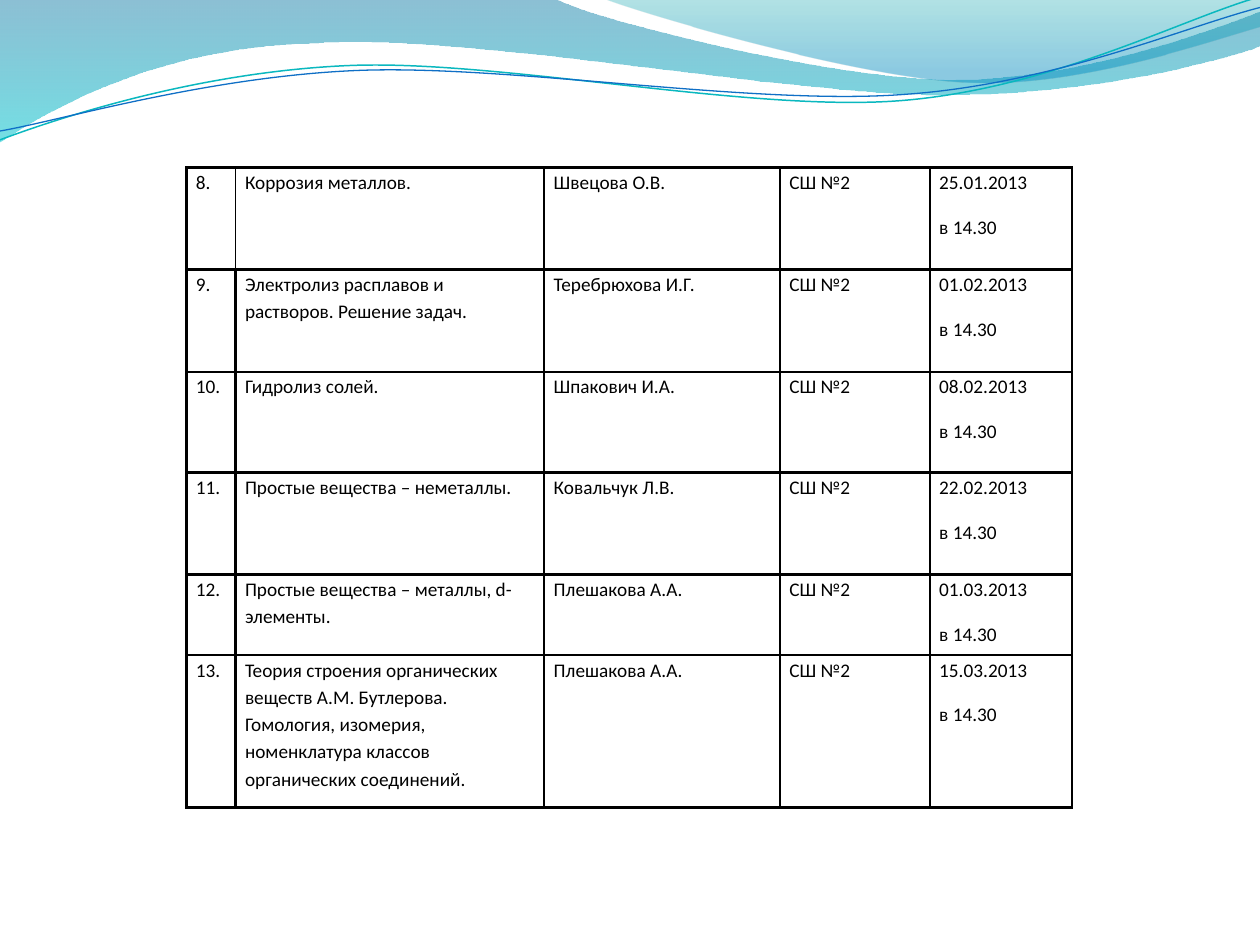
from dataclasses import dataclass
from math import cos, radians, sin

from lxml.etree import SubElement
from pptx import Presentation
from pptx.dml.color import RGBColor
from pptx.oxml.ns import qn
from pptx.util import Inches, Pt

COLORS = {
    "ink": "000000", "deep": "0074A1", "cyan": "00C6CF",
    "teal": "00A1A9", "sky": "008BBF", "aqua": "0AB8BF", "blue": "0F6FC6",
}
TILT = 357.3
Point = tuple[float, float]


@dataclass
class Stop:
    place: float
    color: str
    alpha: int


@dataclass
class Wave:
    """Outline whose steps hold one point (line) or three points (curve)."""
    start: Point
    steps: list[tuple[Point, ...]]
    stops: tuple[Stop, ...] = ()
    line: str = ""
    width: float = 0
    center: Point = (0, 0)
    turn: float = 0


@dataclass
class Lesson:
    num: int
    topic: str
    tutor: str
    date: str
    height: float


WAVES = [
    Wave((0, 0), [
        ((4.4, -0.01),),
        ((4.76, 0.17), (6.64, 0.63), (7.58, 0.63)),
        ((8.53, 0.63), (9.58, 0.26), (10, 0.09)),
        ((10.01, 0.36),),
        ((9.83, 0.44), (8.7, 0.76), (7.46, 0.75)),
        ((6.22, 0.75), (3.82, 0.28), (2.57, 0.34)),
        ((1.29, 0.36), (0.46, 0.83), (-0.01, 1.13)),
        ((0, 0),),
    ], stops=(Stop(0, "deep", 45), Stop(1, "cyan", 55))),
    Wave((4.79, -0.01), [
        ((5.09, 0.11), (6.82, 0.62), (7.69, 0.65)),
        ((8.56, 0.69), (9.61, 0.32), (10, 0.21)),
        ((10, 0),),
        ((4.79, -0.01),),
    ], stops=(Stop(0, "teal", 30), Stop(0.8, "sky", 45))),
    Wave((0, 1.11), [
        ((0.48, 0.93), (1.58, 0.57), (2.77, 0.52)),
        ((3.95, 0.47), (5.93, 0.89), (7.13, 0.8)),
        ((8.33, 0.71), (9.38, 0.15), (9.98, -0.02)),
    ], line="aqua", width=0.85, center=(4.99, 0.58), turn=TILT),
    Wave((0, 1.04), [
        ((0.47, 0.96), (1.64, 0.61), (2.83, 0.56)),
        ((4.03, 0.51), (5.97, 0.84), (7.17, 0.75)),
        ((8.36, 0.67), (9.41, 0.21), (10, 0.06)),
    ], line="blue", width=0.75, center=(5, 0.59), turn=TILT),
]

SCHOOL = "СШ №2"
TIME = "в 14.30"
LESSONS = [
    Lesson(8, "Коррозия металлов.", "Швецова О.В.", "25.01.2013", 0.81),
    Lesson(9, "Электролиз расплавов и растворов. Решение задач.",
           "Теребрюхова И.Г.", "01.02.2013", 0.81),
    Lesson(10, "Гидролиз солей.", "Шпакович И.А.", "08.02.2013", 0.8),
    Lesson(11, "Простые вещества – неметаллы.", "Ковальчук Л.В.", "22.02.2013", 0.81),
    Lesson(12, "Простые вещества – металлы, d-элементы.",
           "Плешакова А.А.", "01.03.2013", 0.64),
    Lesson(13, "Теория строения органических веществ А.М. Бутлерова. Гомология, "
           "изомерия, номенклатура классов органических соединений.",
           "Плешакова А.А.", "15.03.2013", 1.21),
]
WIDTHS = [0.39, 2.45, 1.87, 1.19, 1.13]
SIDES = ("lnL", "lnR", "lnT", "lnB")
THIN = {(0, 0): "lnR", (0, 1): "lnL"}
CELL = {"margin_left": Pt(5.4), "margin_right": Pt(5.4),
        "margin_top": 0, "margin_bottom": 0}
PARA = {"line_spacing": 1.15, "space_after": Pt(10)}
FONT = {"name": "Calibri", "size": Pt(11)}


def style(item, values: dict) -> None:
    for key, value in values.items():
        setattr(item, key, value)


def rgb(name: str) -> RGBColor:
    return RGBColor.from_string(COLORS[name])


def level(point: Point, wave: Wave) -> tuple[int, int]:
    """Undo the wave's turn about its center, so the shape can carry it."""
    angle = radians(-wave.turn)
    (x, y), (cx, cy) = point, wave.center
    dx, dy = x - cx, y - cy
    return (Inches(cx + dx * cos(angle) - dy * sin(angle)),
            Inches(cy + dx * sin(angle) + dy * cos(angle)))


def bend(shape, wave: Wave) -> None:
    """Join each three-point step of the outline into one cubic curve."""
    lines = iter(list(shape._element.iter(qn("a:lnTo"))))
    for step in wave.steps:
        parts = [next(lines) for _ in step]
        if len(parts) == 3:
            head, *rest = parts
            head.tag = qn("a:cubicBezTo")
            for part in rest:
                head.append(part[0])
                part.getparent().remove(part)


def draw_wave(slide, wave: Wave) -> None:
    points = [level(point, wave) for step in wave.steps for point in step]
    path = slide.shapes.build_freeform(*level(wave.start, wave))
    path.add_line_segments(points, close=bool(wave.stops))
    shape = path.convert_to_shape()
    bend(shape, wave)
    shape.rotation = wave.turn
    shape.shadow.inherit = False
    if wave.stops:
        shape.line.fill.background()
        shape.fill.gradient()
        shape.fill.gradient_angle = 270
        for stop, want in zip(shape.fill.gradient_stops, wave.stops):
            stop.position = want.place
            stop.color.rgb = rgb(want.color)
        tints = shape._element.spPr.iter(qn("a:srgbClr"))
        for tint, want in zip(list(tints), wave.stops):
            SubElement(tint, qn("a:alpha"), val=str(want.alpha * 1000))
    else:
        shape.fill.background()
        shape.line.color.rgb = rgb(wave.line)
        shape.line.width = Pt(wave.width)


def add_borders(cell, thin: str | None) -> None:
    props = cell._tc.get_or_add_tcPr()
    for side in SIDES:
        width = Pt(1 if side == thin else 1.5)
        line = SubElement(props, qn(f"a:{side}"), w=str(width))
        fill = SubElement(line, qn("a:solidFill"))
        SubElement(fill, qn("a:srgbClr"), val=COLORS["ink"])


def fill_cell(cell, text: str, thin: str | None) -> None:
    style(cell, CELL)
    add_borders(cell, thin)
    cell.fill.background()
    cell.text = text
    for para in cell.text_frame.paragraphs:
        style(para, PARA)
        for run in para.runs:
            style(run.font, FONT)
            run.font.color.rgb = rgb("ink")


def draw_table(slide) -> None:
    heights = [lesson.height for lesson in LESSONS]
    table = slide.shapes.add_table(
        len(LESSONS), len(WIDTHS), Inches(1.48), Inches(1.33),
        Inches(sum(WIDTHS)), Inches(sum(heights))).table
    style(table, {"first_row": False, "horz_banding": False})
    for col, width in zip(table.columns, WIDTHS):
        col.width = Inches(width)
    for r, lesson in enumerate(LESSONS):
        table.rows[r].height = Inches(lesson.height)
        texts = (f"{lesson.num}.", lesson.topic, lesson.tutor, SCHOOL,
                 f"{lesson.date}\n{TIME}")
        for c, text in enumerate(texts):
            fill_cell(table.cell(r, c), text, THIN.get((r, c)))


def main() -> None:
    deck = Presentation()
    style(deck, {"slide_width": Inches(10), "slide_height": Inches(7.5)})
    slide = deck.slides.add_slide(deck.slide_layouts[6])
    for wave in WAVES:
        draw_wave(slide, wave)
    draw_table(slide)
    deck.save("out.pptx")


if __name__ == "__main__":
    main()
